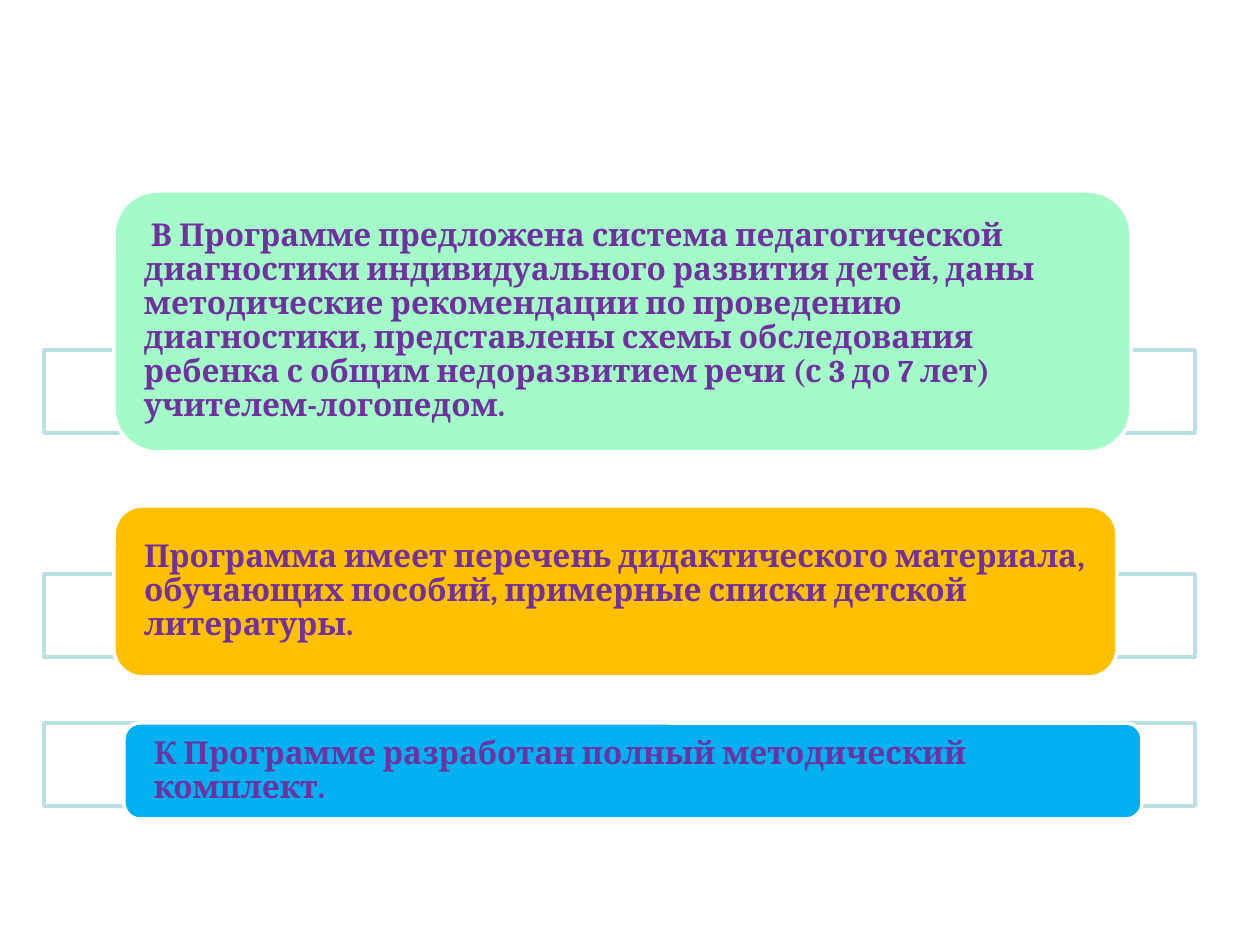
from pptx import Presentation
from pptx.dml.color import RGBColor
from pptx.enum.shapes import MSO_SHAPE
from pptx.enum.text import MSO_ANCHOR, PP_ALIGN
from pptx.util import Pt

PX = 914400 / 126
RECT, ROUNDED = MSO_SHAPE.RECTANGLE, MSO_SHAPE.ROUNDED_RECTANGLE
MIDDLE, LEFT = MSO_ANCHOR.MIDDLE, PP_ALIGN.LEFT

WHITE = RGBColor(0xFF, 0xFF, 0xFF)
PALE_TEAL = RGBColor(0xBB, 0xE0, 0xE3)
MINT = RGBColor(0xA3, 0xFB, 0xC7)
AMBER = RGBColor(0xFF, 0xC0, 0x00)
BLUE = RGBColor(0x00, 0xB0, 0xF0)
PURPLE = RGBColor(0x70, 0x30, 0xA0)

FRAME_LEFT, FRAME_WIDTH, FRAME_HEIGHT = 44, 1151, 83
TEXT_INSET = 30
CORNER_INSET = 0.0488  # share of the height a rounded box already keeps free

# frame top, label box (left, top, width, height), fill, first-line indent, text
ITEMS = [
    (350, (114, 191, 1017, 261), MINT, 7,
     "В Программе предложена система педагогической диагностики "
     "индивидуального развития детей, даны методические рекомендации по "
     "проведению диагностики, представлены схемы обследования ребенка с общим "
     "недоразвитием речи (с 3 до 7 лет) учителем-логопедом."),
    (574, (114, 506, 1003, 171), AMBER, 0,
     "Программа имеет перечень дидактического материала, обучающих пособий, "
     "примерные списки детской литературы."),
    (723, (124, 723, 1018, 96), BLUE, 0,
     "К Программе разработан полный методический комплект."),
]


def px(length):
    return round(length * PX)


def add_panel(page, kind, box, fill, line):
    panel = page.shapes.add_shape(kind, *map(px, box))
    panel.shadow.inherit = False
    panel.fill.solid()
    panel.fill.fore_color.rgb = fill
    panel.line.color.rgb = line
    panel.line.width = Pt(2)
    return panel


def add_label(page, box, fill, indent, text):
    label = add_panel(page, ROUNDED, box, fill, WHITE)
    frame = label.text_frame
    frame.word_wrap = True
    frame.vertical_anchor = MIDDLE
    frame.margin_left = frame.margin_right = px(TEXT_INSET - CORNER_INSET * box[3])
    frame.margin_top = frame.margin_bottom = 0
    para = frame.paragraphs[0]
    para.text = text
    para.alignment = LEFT
    para.line_spacing = 0.9
    if indent:
        para._p.get_or_add_pPr().set("indent", str(px(indent)))
    para.font.name = "Cambria"
    para.font.size = Pt(18)
    para.font.bold = True
    para.font.color.rgb = PURPLE


def add_list_item(page, frame_top, box, fill, indent, text):
    frame_box = (FRAME_LEFT, frame_top, FRAME_WIDTH, FRAME_HEIGHT)
    add_panel(page, RECT, frame_box, WHITE, PALE_TEAL)
    add_label(page, box, fill, indent, text)


def main():
    deck = Presentation()
    deck.slide_width, deck.slide_height = px(1260), px(945)
    page = deck.slides.add_slide(deck.slide_layouts[6])
    for item in ITEMS:
        add_list_item(page, *item)
    deck.save("out.pptx")


if __name__ == "__main__":
    main()
